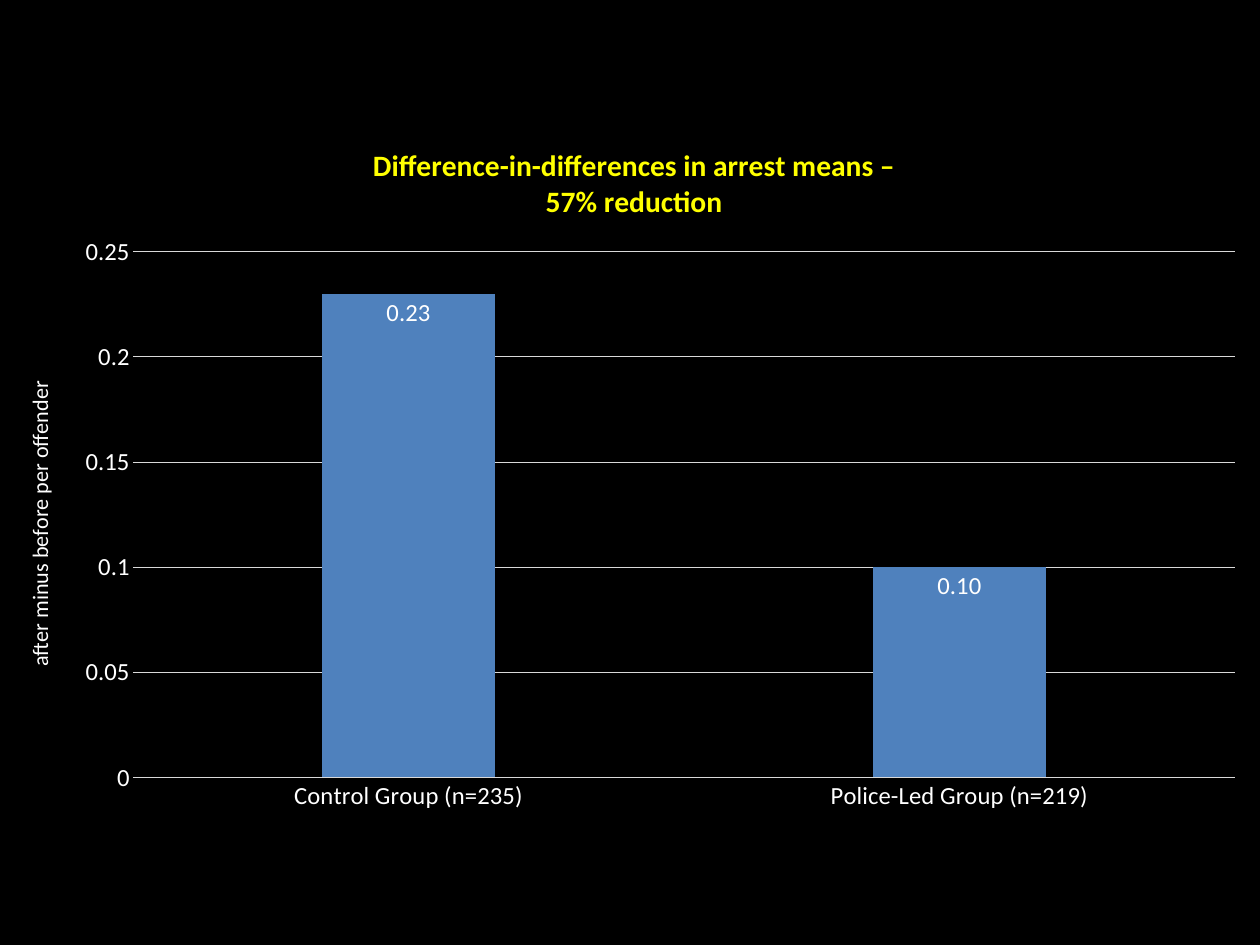
from dataclasses import dataclass
from lxml.etree import SubElement
from pptx import Presentation
from pptx.chart.data import CategoryChartData
from pptx.dml.color import RGBColor
from pptx.enum.chart import XL_CHART_TYPE, XL_LABEL_POSITION, XL_TICK_MARK
from pptx.oxml.ns import qn
from pptx.util import Inches, Pt


@dataclass(frozen=True)
class Theme:
    font: str = "Calibri"
    background: RGBColor = RGBColor.from_string("000000")
    text: RGBColor = RGBColor.from_string("FFFFFF")
    title: RGBColor = RGBColor.from_string("FFFF00")
    grid: RGBColor = RGBColor.from_string("D9D9D9")
    bar: RGBColor = RGBColor.from_string("4F81BD")
    title_size: Pt = Pt(24)
    axis_title_size: Pt = Pt(18)
    label_size: Pt = Pt(20)


theme = Theme()


def set_font(font, size, color, bold=False):
    font.name = theme.font
    font.size = size
    font.bold = bold
    font.color.rgb = color


prs = Presentation()
prs.slide_width = Inches(14.22)
prs.slide_height = Inches(10.67)
s = prs.slides.add_slide(prs.slide_layouts[6])
s.background.fill.solid()
s.background.fill.fore_color.rgb = theme.background

data = CategoryChartData()
data.categories = ["Control Group (n=235)", "Police-Led Group (n=219)"]
data.add_series("Series 1", [0.23, 0.1])
chart = s.shapes.add_chart(
    XL_CHART_TYPE.COLUMN_CLUSTERED,
    Inches(0.09), Inches(1.42), Inches(14.13), Inches(7.91), data,
).chart
set_font(chart.font, theme.label_size, theme.text)
chart.has_legend = False

tf = chart.chart_title.text_frame
tf.text = "Difference-in-differences in arrest means –\n57% reduction"
for p in tf.paragraphs:
    set_font(p.font, theme.title_size, theme.title, bold=True)
chart.chart_title.include_in_layout = False

plot = chart.plots[0]
plot.gap_width = 219
plot.overlap = -27
plot.vary_by_categories = False
bars = plot.series[0]
bars.format.fill.solid()
bars.format.fill.fore_color.rgb = theme.bar

labels = bars.data_labels
labels.show_value = True
labels.position = XL_LABEL_POSITION.INSIDE_END
labels.number_format = "#,##0.00"
labels.number_format_is_linked = False
set_font(labels.font, theme.label_size, theme.text)

cat_axis, val_axis = chart.category_axis, chart.value_axis
for axis in (cat_axis, val_axis):
    axis.major_tick_mark = XL_TICK_MARK.NONE
    axis.minor_tick_mark = XL_TICK_MARK.NONE
    set_font(axis.tick_labels.font, theme.label_size, theme.text)
val_axis.minimum_scale = 0
val_axis.maximum_scale = 0.25
val_axis.major_unit = 0.05
val_axis.tick_labels.number_format = "General"
val_axis.tick_labels.number_format_is_linked = False
val_axis.format.line.fill.background()
for line in (cat_axis.format.line, val_axis.major_gridlines.format.line):
    line.color.rgb = theme.grid
    line.width = Pt(0.75)

tf = val_axis.axis_title.text_frame
tf.text = "after minus before per offender"
set_font(tf.paragraphs[0].font, theme.axis_title_size, theme.text)

plot_area = chart.element.find(".//" + qn("c:plotArea"))
for layout in plot_area.findall(qn("c:layout")):
    plot_area.remove(layout)
layout = SubElement(plot_area, qn("c:layout"))
plot_area.insert(0, layout)
manual = SubElement(layout, qn("c:manualLayout"))
for tag, value in (
    ("layoutTarget", "inner"), ("xMode", "edge"), ("yMode", "edge"),
    ("x", "0.1"), ("y", "0.18"), ("w", "0.88"), ("h", "0.75"),
):
    SubElement(manual, qn("c:" + tag)).set("val", value)

prs.save("out.pptx")
